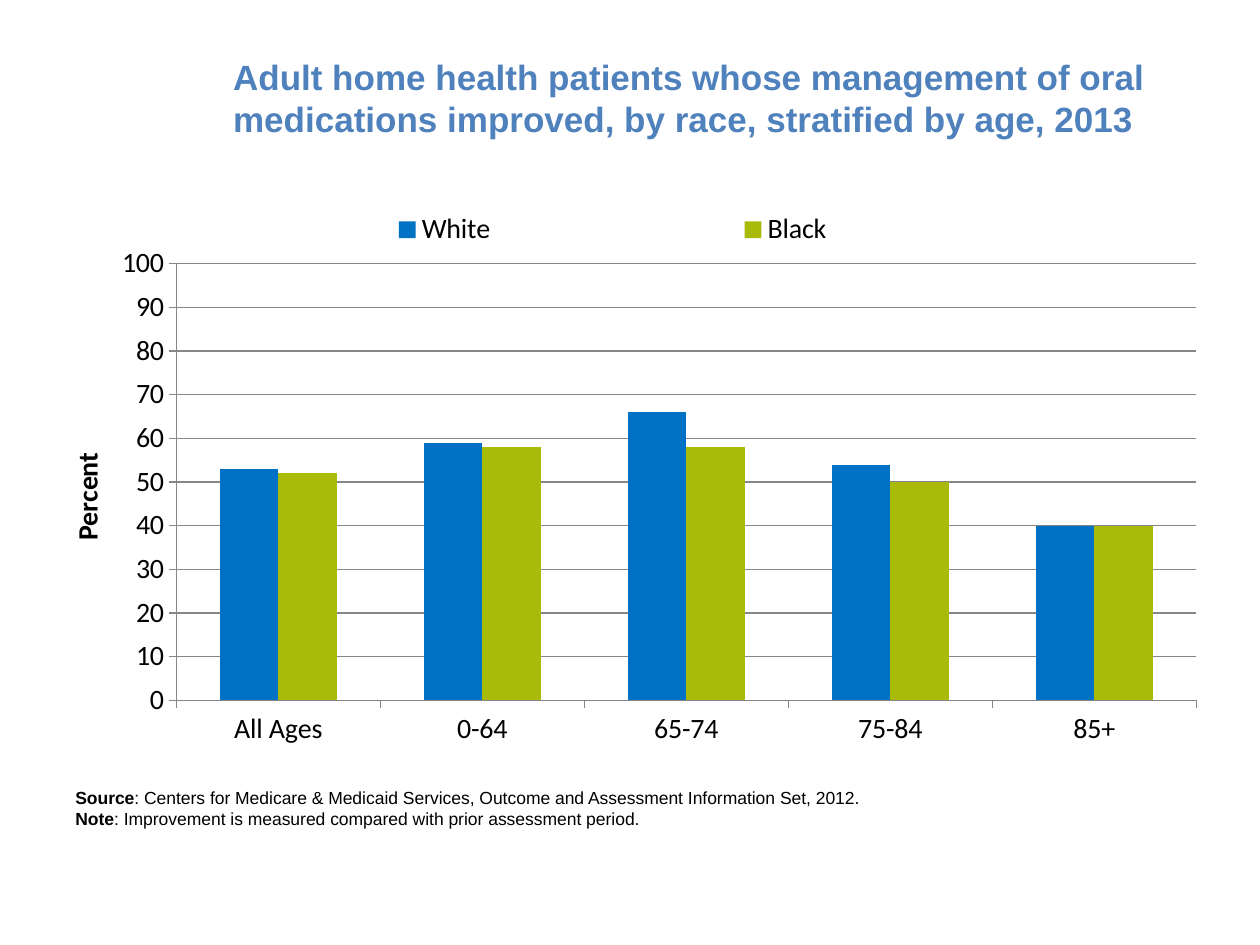
from lxml import etree
from pptx import Presentation
from pptx import util as u
from pptx.chart.data import CategoryChartData
from pptx.dml.color import RGBColor
from pptx.enum import chart as ch, text
from pptx.oxml.ns import qn

BLACK, TITLE_BLUE, AXIS_GRAY = "000000", "4F81BD", "868686"
AGES = ["All Ages", "0-64", "65-74", "75-84", "85+"]
SERIES = [("White", "0072C6", [53, 59, 66, 54, 40]),
          ("Black", "AABA0A", [52, 58, 58, 50, 40])]
NOTES = [("Source", ": Centers for Medicare & Medicaid Services, "
                    "Outcome and Assessment Information Set, 2012."),
         ("Note", ": Improvement is measured compared with prior assessment period.")]


def color(hex_string):
    return RGBColor.from_string(hex_string)


def style_font(font, name, size, hex_string=BLACK, bold=False):
    font.name, font.size, font.bold = name, u.Pt(size), bold
    font.color.rgb = color(hex_string)


def add_run(paragraph, words, *style):
    run = paragraph.add_run()
    run.text = words
    style_font(run.font, *style)


def add_text_frame(slide, box, anchor):
    frame = slide.shapes.add_textbox(*box).text_frame
    frame.word_wrap = True
    frame.vertical_anchor = anchor
    return frame


def add_title(slide, box):
    frame = add_text_frame(slide, box, text.MSO_ANCHOR.MIDDLE)
    add_run(frame.paragraphs[0],
            "Adult home health patients whose management of oral medications "
            "improved, by race, stratified by age, 2013",
            "Arial", 20, TITLE_BLUE, True)


def add_notes(slide, box):
    frame = add_text_frame(slide, box, text.MSO_ANCHOR.TOP)
    frame.auto_size = text.MSO_AUTO_SIZE.SHAPE_TO_FIT_TEXT
    for index, (label, words) in enumerate(NOTES):
        paragraph = frame.add_paragraph() if index else frame.paragraphs[0]
        add_run(paragraph, label, "Arial", 10, BLACK, True)
        add_run(paragraph, words, "Arial", 10)


def set_layout(element, position, x, y, w, h, inner=False):
    """Place a chart part by fractions of the chart's width and height."""
    for old in element.findall(qn("c:layout")):
        element.remove(old)
    layout = etree.Element(qn("c:layout"))
    manual = etree.SubElement(layout, qn("c:manualLayout"))
    settings = [("layoutTarget", "inner")] if inner else []
    settings += [("xMode", "edge"), ("yMode", "edge"),
                 ("x", x), ("y", y), ("w", w), ("h", h)]
    for tag, value in settings:
        etree.SubElement(manual, qn(f"c:{tag}")).set("val", str(value))
    element.insert(position, layout)


def style_line(line):
    line.color.rgb = color(AXIS_GRAY)
    line.width = u.Pt(0.75)


def style_axes(chart):
    for axis in (chart.category_axis, chart.value_axis):
        axis.major_tick_mark = ch.XL_TICK_MARK.OUTSIDE
        axis.minor_tick_mark = ch.XL_TICK_MARK.NONE
        style_font(axis.tick_labels.font, "Calibri", 16)
        style_line(axis.format.line)
    axis = chart.value_axis
    axis.minimum_scale, axis.maximum_scale, axis.major_unit = 0, 100, 10
    axis.tick_labels.number_format = "0"
    axis.tick_labels.number_format_is_linked = False
    axis.has_major_gridlines = True
    style_line(axis.major_gridlines.format.line)
    add_run(axis.axis_title.text_frame.paragraphs[0],
            "Percent", "Calibri", 16, BLACK, True)


def add_age_chart(slide, box):
    data = CategoryChartData(number_format="0")
    data.categories = AGES
    for name, _, values in SERIES:
        data.add_series(name, values)
    chart = slide.shapes.add_chart(ch.XL_CHART_TYPE.COLUMN_CLUSTERED, *box, data).chart
    chart.has_title = False
    style_font(chart.font, "Arial", 10)
    style_axes(chart)

    plot = chart.plots[0]
    plot.gap_width, plot.overlap, plot.vary_by_categories = 150, 0, False
    for series, (_, fill, _) in zip(plot.series, SERIES):
        series.format.fill.solid()
        series.format.fill.fore_color.rgb = color(fill)

    chart.has_legend = True
    legend = chart.legend
    legend.position = ch.XL_LEGEND_POSITION.TOP
    legend.include_in_layout = False
    style_font(legend.font, "Calibri", 16)

    plot_area = chart.element.find(".//" + qn("c:plotArea"))
    set_layout(plot_area, 0, 0.1, 0.11, 0.9, 0.77, inner=True)
    set_layout(chart.element.find(".//" + qn("c:legend")), 1, 0.08, 0.01, 0.81, 0.08)


def main():
    presentation = Presentation()
    presentation.slide_width, presentation.slide_height = u.Cm(25.4), u.Cm(19.05)
    slide = presentation.slides.add_slide(presentation.slide_layouts[6])
    left, width = u.Cm(1.27), u.Cm(22.86)
    add_title(slide, (u.Cm(4.45), u.Cm(0.76), u.Cm(19.68), u.Cm(2.41)))
    add_age_chart(slide, (left, u.Cm(4.06), width, u.Cm(11.43)))
    add_notes(slide, (left, u.Cm(15.75), width, u.Cm(1.12)))
    presentation.save("out.pptx")


if __name__ == "__main__":
    main()
